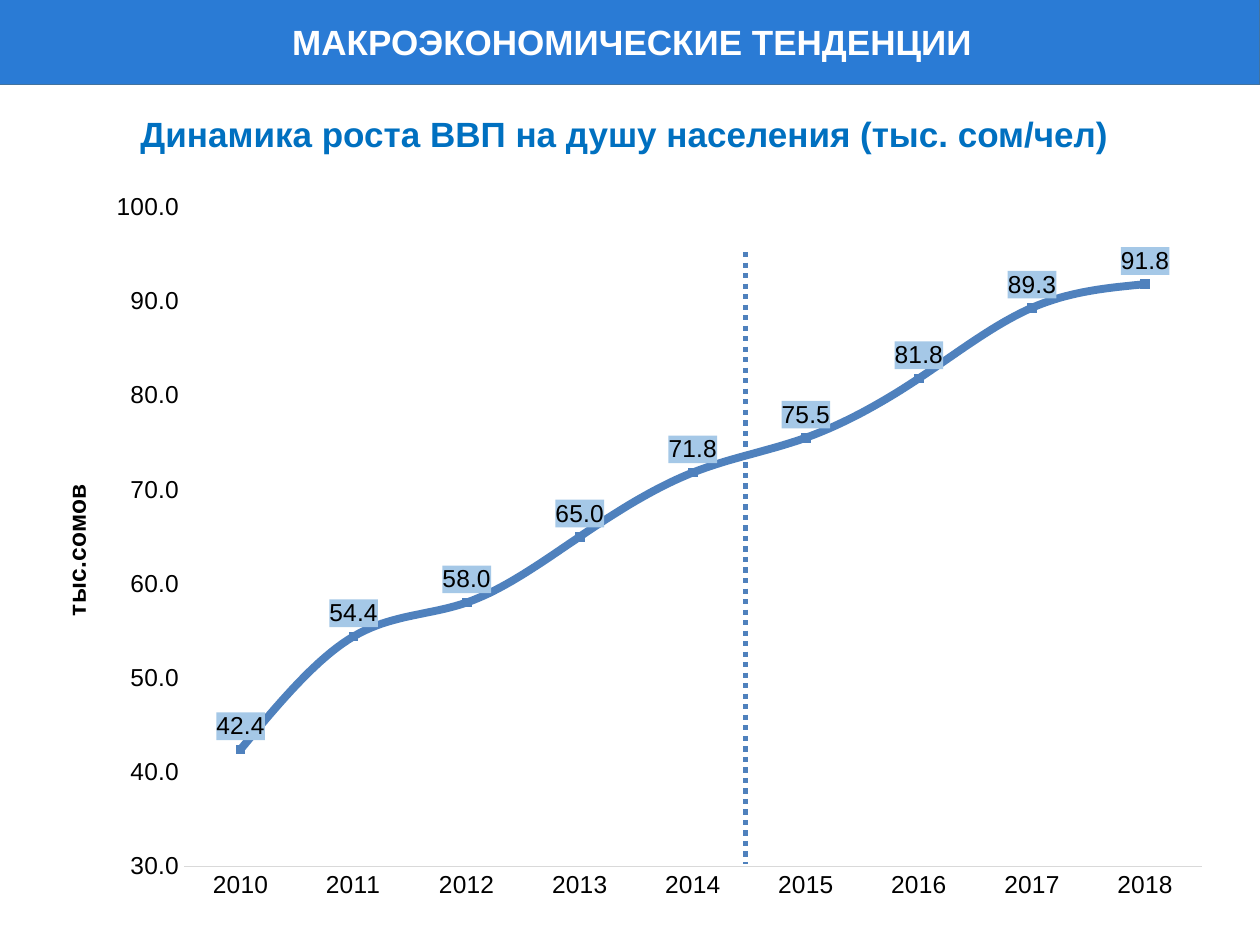
"""Build the slide on growth of GDP per head."""
from dataclasses import dataclass

from lxml import etree
from pptx import Presentation
from pptx.chart.data import CategoryChartData
from pptx.dml.color import RGBColor
from pptx.enum.chart import XL_CHART_TYPE, XL_LABEL_POSITION, XL_MARKER_STYLE, XL_TICK_MARK
from pptx.enum.dml import MSO_LINE
from pptx.enum.shapes import MSO_CONNECTOR, MSO_SHAPE
from pptx.enum.text import MSO_ANCHOR, MSO_AUTO_SIZE, PP_ALIGN
from pptx.oxml import parse_xml
from pptx.oxml.ns import nsdecls, qn
from pptx.util import Pt

LINE_MARKS = XL_CHART_TYPE.LINE_MARKERS
ABOVE = XL_LABEL_POSITION.ABOVE
SQUARE = XL_MARKER_STYLE.SQUARE
NO_TICK = XL_TICK_MARK.NONE
DOTS = MSO_LINE.ROUND_DOT
STRAIGHT = MSO_CONNECTOR.STRAIGHT
RECT = MSO_SHAPE.RECTANGLE
MIDDLE = MSO_ANCHOR.MIDDLE
NO_FIT = MSO_AUTO_SIZE.NONE
CENTER = PP_ALIGN.CENTER

FONT = "Arial"
COLORS = {
    "band": "2A7BD5", "edge": "43739E", "white": "FFFFFF", "head": "0070C0",
    "black": "000000", "axis": "D9D9D9", "series": "4F81BD", "label": "A5C8E7",
}
YEARS = [str(year) for year in range(2010, 2019)]
VALUES = [42.4, 54.4, 58.0, 65.0, 71.8, 75.5, 81.8, 89.3, 91.8]


@dataclass
class Box:
    """A place on the slide, in points."""
    left: float
    top: float
    width: float
    height: float

    def lengths(self) -> list:
        """Give the four lengths for a new shape."""
        return [Pt(n) for n in (self.left, self.top, self.width, self.height)]


@dataclass
class Heading:
    """A centred line of bold text."""
    text: str
    box: Box
    color: str


TITLE = Heading("МАКРОЭКОНОМИЧЕСКИЕ ТЕНДЕНЦИИ ", Box(60.5, 8, 607, 31.5), "white")
SUBHEAD = Heading("Динамика роста ВВП на душу населения (тыс. сом/чел) ",
                  Box(18.7, 60.5, 682, 31.5), "head")
BAND = Box(-0.7, -0.7, 720.7, 49)
CHART = Box(11.5, 101.5, 689, 420.5)


def rgb(name: str) -> RGBColor:
    """Look up a colour."""
    return RGBColor.from_string(COLORS[name])


def set_font(font, size: float, color: str, bold: bool) -> None:
    """Format a font."""
    font.name = FONT
    font.size = Pt(size)
    font.bold = bold
    font.color.rgb = rgb(color)


def write(shape, head: Heading) -> None:
    """Place and fill a heading."""
    shape.left, shape.top, shape.width, shape.height = head.box.lengths()
    frame = shape.text_frame
    frame.text = head.text
    frame.word_wrap = True
    frame.auto_size = NO_FIT
    frame.vertical_anchor = MIDDLE
    para = frame.paragraphs[0]
    para.alignment = CENTER
    set_font(para.font, 20, head.color, True)


def add_band(slide) -> None:
    """Draw the band behind the title."""
    band = slide.shapes.add_shape(RECT, *BAND.lengths())
    band.shadow.inherit = False
    band.fill.solid()
    band.fill.fore_color.rgb = rgb("band")
    band.line.color.rgb = rgb("edge")
    band.line.width = Pt(1)
    slide.shapes._spTree.insert(2, band._element)


def set_layout(parent, index: int, **parts: float) -> None:
    """Fix the layout of a chart part as shares of the chart."""
    for old in parent.findall(qn("c:layout")):
        parent.remove(old)
    layout = etree.Element(qn("c:layout"))
    manual = etree.SubElement(layout, qn("c:manualLayout"))
    if "w" in parts:
        etree.SubElement(manual, qn("c:layoutTarget"), val="inner")
    for mode in ("xMode", "yMode"):
        etree.SubElement(manual, qn(f"c:{mode}"), val="edge")
    for name, share in parts.items():
        etree.SubElement(manual, qn(f"c:{name}"), val=str(share))
    parent.insert(index, layout)


def style_axes(chart) -> None:
    """Format both axes."""
    years, sums = chart.category_axis, chart.value_axis
    for axis in (years, sums):
        axis.major_tick_mark = axis.minor_tick_mark = NO_TICK
        axis.has_major_gridlines = False
    years.format.line.color.rgb = rgb("axis")
    years.format.line.width = Pt(0.75)
    sums.format.line.fill.background()
    sums.minimum_scale, sums.maximum_scale, sums.major_unit = 30, 100, 10
    sums.tick_labels.number_format = "#\\ ##0.0"
    sums.tick_labels.number_format_is_linked = False
    title = sums.axis_title
    title.text_frame.text = "тыс.сомов"
    set_font(title.text_frame.paragraphs[0].font, 14, "black", True)
    set_layout(title._element, 1, x=0.03, y=0.41)


def style_series(series) -> None:
    """Format the curve, its markers and labels."""
    series.smooth = True
    series.format.line.color.rgb = rgb("series")
    series.format.line.width = Pt(4.5)
    mark = series.marker
    mark.style, mark.size = SQUARE, 5
    mark.format.fill.solid()
    mark.format.fill.fore_color.rgb = rgb("series")
    mark.format.line.color.rgb = rgb("series")
    labels = series.data_labels
    labels.show_value = True
    labels.position = ABOVE
    labels.number_format = "#,##0.0"
    labels.number_format_is_linked = False
    set_font(labels.font, 14, "black", False)
    fill = parse_xml(f'<c:spPr {nsdecls("c", "a")}><a:solidFill>'
                     f'<a:srgbClr val="{COLORS["label"]}"/></a:solidFill></c:spPr>')
    labels._element.find(qn("c:txPr")).addprevious(fill)


def add_curve(slide) -> None:
    """Add the line chart."""
    data = CategoryChartData(number_format="0.0")
    data.categories = YEARS
    data.add_series("Series 1", VALUES)
    chart = slide.shapes.add_chart(LINE_MARKS, *CHART.lengths(), data).chart
    chart.has_title = chart.has_legend = False
    set_font(chart.font, 14, "black", False)
    chart.plots[0].vary_by_categories = False
    style_axes(chart)
    style_series(chart.plots[0].series[0])
    area = chart._chartSpace.chart.plotArea
    set_layout(area, 0, x=0.136, y=0.04, w=0.844, h=0.896)


def add_split(slide) -> None:
    """Draw the dotted line after 2014."""
    split = slide.shapes.add_connector(STRAIGHT, Pt(426), Pt(144), Pt(426), Pt(494))
    split.line.color.rgb = rgb("series")
    split.line.width = Pt(3)
    split.line.dash_style = DOTS
    etree.SubElement(split._element.spPr, qn("a:effectLst"))


def main() -> None:
    """Build and save the deck."""
    deck = Presentation()
    deck.slide_width, deck.slide_height = Pt(720), Pt(540)
    slide = deck.slides.add_slide(deck.slide_layouts[5])
    add_band(slide)
    write(slide.shapes.title, TITLE)
    write(slide.shapes.add_textbox(*SUBHEAD.box.lengths()), SUBHEAD)
    add_curve(slide)
    add_split(slide)
    deck.save("out.pptx")


if __name__ == "__main__":
    main()
